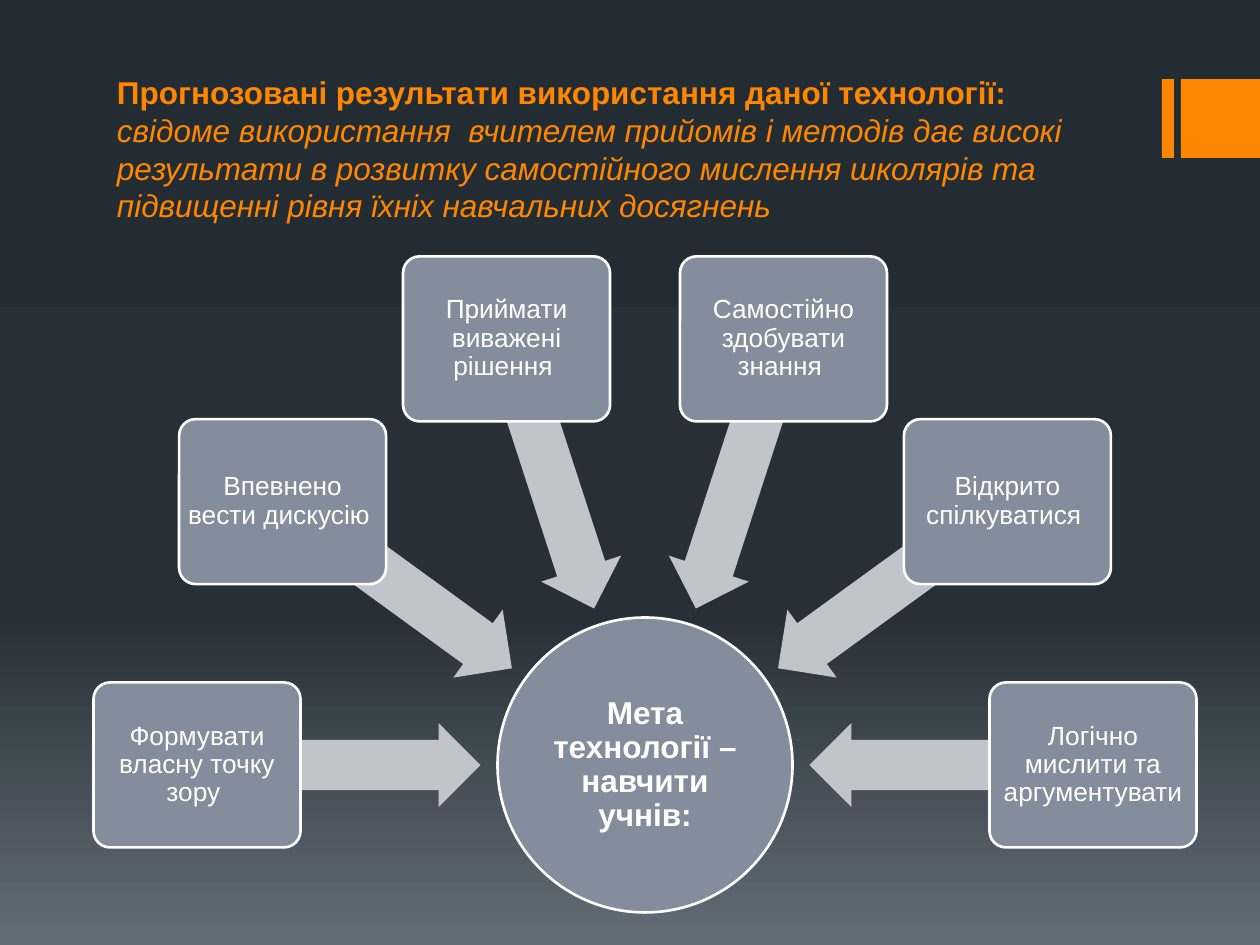
from copy import deepcopy
from math import cos, radians, sin

from pptx import Presentation
from pptx.dml.color import RGBColor
from pptx.enum.shapes import MSO_SHAPE
from pptx.enum.text import MSO_ANCHOR, PP_ALIGN
from pptx.oxml.ns import qn
from pptx.util import Pt

RECTANGLE = MSO_SHAPE.RECTANGLE
ROUNDED = MSO_SHAPE.ROUNDED_RECTANGLE
OVAL = MSO_SHAPE.OVAL
LEFT_ARROW = MSO_SHAPE.LEFT_ARROW
LEFT, CENTER = PP_ALIGN.LEFT, PP_ALIGN.CENTER
TOP, MIDDLE = MSO_ANCHOR.TOP, MSO_ANCHOR.MIDDLE

HEADING = "Прогнозовані результати використання даної технології:"
SUBHEADING = (
    "свідоме використання  вчителем прийомів і методів дає високі "
    "результати в розвитку самостійного мислення школярів та "
    "підвищенні рівня їхніх навчальних досягнень"
)
HUB = "Мета технології – навчити учнів:"
GOALS = [
    "Формувати власну точку зору ",
    "Впевнено вести дискусію ",
    "Приймати виважені рішення ",
    "Самостійно здобувати знання ",
    "Відкрито спілкуватися ",
    "Логічно мислити та аргументувати",
]

COLORS = {
    "accent": "FF8600",
    "node": "838D9B",
    "arrow": "C1C5CB",
    "white": "FFFFFF",
}
BACKGROUND_STOPS = [(0, "242C33"), (0.65, "273037"), (1, "636D76")]
FONT = "Arial"

SLIDE_SIZE = (1260, 945)
ACCENT_BARS = [(1162, 79, 12, 79), (1181, 79, 79, 79)]
TITLE_BOX = (105, 67, 1008, 170)
HUB_CENTER = (645, 765)
HUB_SIZE = (295, 295)
GOAL_SIZE = (207, 165)
ARROW_SIZE = (283, 84)
GOAL_RADIUS, ARROW_RADIUS = 448, 306


def px(value):
    return round(value * 914400 / 126)


def color(name):
    return RGBColor.from_string(COLORS[name])


def add_text(frame, *texts, size, fill, bold=(False,), italic=(False,),
             align=CENTER, anchor=MIDDLE, spacing=0.9, margins=(4, 4)):
    frame.word_wrap = True
    frame.vertical_anchor = anchor
    frame.margin_left = frame.margin_right = px(margins[0])
    frame.margin_top = frame.margin_bottom = px(margins[1])
    for index, text in enumerate(texts):
        paragraph = frame.add_paragraph() if index else frame.paragraphs[0]
        paragraph.alignment = align
        paragraph.line_spacing = spacing
        run = paragraph.add_run()
        run.text = text
        run.font.name = FONT
        run.font.size = Pt(size)
        run.font.bold = bold[index]
        run.font.italic = italic[index]
        run.font.color.rgb = color(fill)


def add_shape(slide, kind, box, fill, outlined=False):
    shape = slide.shapes.add_shape(kind, *map(px, box))
    shape.shadow.inherit = False
    shape.fill.solid()
    shape.fill.fore_color.rgb = color(fill)
    if outlined:
        shape.line.color.rgb = color("white")
        shape.line.width = Pt(1.5)
    else:
        shape.line.fill.background()
    return shape


def box_around(center, size):
    return (center[0] - size[0] / 2, center[1] - size[1] / 2, *size)


def on_circle(radius, angle):
    return (HUB_CENTER[0] + radius * cos(radians(angle)),
            HUB_CENTER[1] + radius * sin(radians(angle)))


def set_background(slide):
    fill = slide.background.fill
    fill.gradient()
    fill.gradient_angle = 270
    first_stop = next(slide.element.iter(qn("a:gs")))
    first_stop.addnext(deepcopy(first_stop))
    for stop, (position, value) in zip(fill.gradient_stops, BACKGROUND_STOPS):
        stop.position = position
        stop.color.rgb = RGBColor.from_string(value)


def add_goal(slide, text, angle):
    arrow = add_shape(slide, LEFT_ARROW,
                      box_around(on_circle(ARROW_RADIUS, angle), ARROW_SIZE), "arrow")
    arrow.adjustments[0] = 0.6
    arrow.adjustments[1] = 0.5
    arrow.rotation = angle
    goal = add_shape(slide, ROUNDED,
                     box_around(on_circle(GOAL_RADIUS, angle), GOAL_SIZE), "node", True)
    goal.adjustments[0] = 0.1
    add_text(goal.text_frame, text, size=15, fill="white")


def main():
    presentation = Presentation()
    presentation.slide_width, presentation.slide_height = map(px, SLIDE_SIZE)
    slide = presentation.slides.add_slide(presentation.slide_layouts[6])
    set_background(slide)

    for bar in ACCENT_BARS:
        add_shape(slide, RECTANGLE, bar, "accent")

    title = slide.shapes.add_textbox(*map(px, TITLE_BOX))
    add_text(title.text_frame, HEADING, SUBHEADING, size=18, fill="accent",
             bold=(True, False), italic=(False, True), align=LEFT, anchor=TOP,
             spacing=1, margins=(12, 6))

    hub = add_shape(slide, OVAL, box_around(HUB_CENTER, HUB_SIZE), "node", True)
    add_text(hub.text_frame, HUB, size=18, fill="white", bold=(True,), margins=(1, 1))

    step = 180 / (len(GOALS) - 1)
    for index, text in enumerate(GOALS):
        add_goal(slide, text, 180 + index * step)

    presentation.save("out.pptx")


if __name__ == "__main__":
    main()
